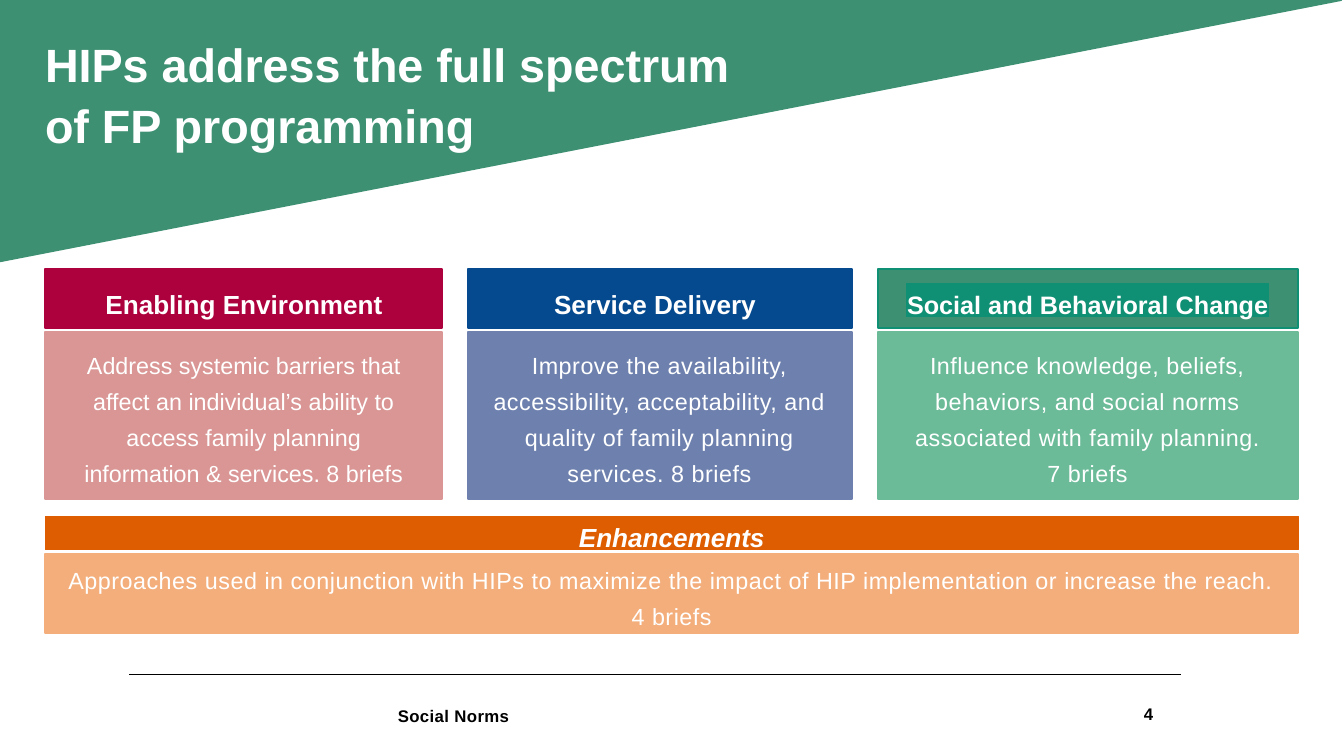
from lxml import etree
from pptx import Presentation
from pptx.dml.color import RGBColor
from pptx.enum.shapes import MSO_CONNECTOR, MSO_SHAPE
from pptx.enum.text import MSO_ANCHOR, PP_ALIGN
from pptx.oxml.ns import qn
from pptx.util import Inches, Pt

RECT, STRAIGHT = MSO_SHAPE.RECTANGLE, MSO_CONNECTOR.STRAIGHT
LEFT, CENTER, RIGHT = PP_ALIGN.LEFT, PP_ALIGN.CENTER, PP_ALIGN.RIGHT
TOP, MIDDLE = MSO_ANCHOR.TOP, MSO_ANCHOR.MIDDLE

TITLE_ONLY = 5
COLS, ROWS = 20, 11.25
W, H = Inches(20), Inches(11.25)
WHITE, BLACK, GREEN = "FFFFFF", "000000", "3E9073"

HEAD = {"size": Pt(28), "bold": True}
BODY = {"size": Pt(25)}
FOOT = {"size": Pt(18), "bold": True}

# box, header colour, header plate, header line, body colour,
# header text (inset, width, size), body text (inset, width, letter spacing)
CARDS = [
    ((0.67, 4.01, 5.91, 3.41), "AD013E", None, "AD013E", "D99694",
     (0.51, 4.9, 28), (0.48, 4.95, 0), "Enabling Environment",
     ["Address systemic barriers that affect an individual’s ability to "
      "access family planning information & services. 8 briefs"]),
    ((6.96, 4.01, 5.72, 3.41), "054A8E", None, "054A8E", "6E81AE",
     (0.55, 4.47, 28), (0.38, 4.95, 0.6), "Service Delivery",
     ["Improve the availability, accessibility, acceptability, and quality "
      "of family planning services. 8 briefs"]),
    ((13.06, 4.01, 6.26, 3.41), GREEN, "0F8F73", "0F8F73", "6BBB99",
     (0.43, 5.39, 27), (0.02, 6.21, 0.6), "Social and Behavioral Change",
     ["Influence knowledge, beliefs, behaviors, and social norms associated "
      "with family planning.", "7 briefs"]),
]


def color(hex_value):
    return RGBColor.from_string(hex_value)


def place(x, y, w, h):
    """Turn grid columns and rows into slide lengths."""
    return [int(v) for v in (x * W / COLS, y * H / ROWS, w * W / COLS, h * H / ROWS)]


def paint(sp, fill, line=None, width=2):
    sp.shadow.inherit = False
    sp.fill.solid()
    sp.fill.fore_color.rgb = color(fill)
    sp.line.color.rgb = color(line or fill)
    sp.line.width = Pt(width)


def panel(slide, box, fill, line=None, width=2):
    sp = slide.shapes.add_shape(RECT, *place(*box))
    paint(sp, fill, line, width)
    return sp


def write(sp, lines, fmt, align=CENTER, leading=38.5, ink=WHITE, spacing=0, anchor=TOP):
    tf = sp.text_frame
    frame = {"word_wrap": True, "vertical_anchor": anchor, "margin_left": 0,
             "margin_right": 0, "margin_top": 0, "margin_bottom": 0}
    for name, value in frame.items():
        setattr(tf, name, value)
    for i, line in enumerate(lines):
        p = tf.add_paragraph() if i else tf.paragraphs[0]
        p.alignment = align
        if leading:
            p.line_spacing = Pt(leading)
        r = p.add_run()
        r.text = line
        for name, value in {"name": "Arial", **fmt}.items():
            setattr(r.font, name, value)
        r.font.color.rgb = color(ink)
        if spacing:
            r._r.get_or_add_rPr().set("spc", str(round(spacing * 100)))


def label(slide, box, lines, fmt, **options):
    write(slide.shapes.add_textbox(*place(*box)), lines, fmt, **options)


def add_banner(slide, box):
    """Green wedge with the title on top of it."""
    x, y, w, h = place(*box)
    builder = slide.shapes.build_freeform(x, y)
    builder.add_line_segments([(x, y + h), (x + w, y)], close=True)
    paint(builder.convert_to_shape(), GREEN)

    title = slide.shapes.title
    title.left, title.top, title.width, title.height = place(0.67, 0.47, 10.58, 1.82)
    write(title, ["HIPs address the full spectrum of FP programming"],
          {"size": Pt(50), "bold": True}, align=LEFT, leading=65)
    slide.shapes._spTree.append(title._element)


def add_card(slide, box, head, plate, line, body, head_text, body_text, name, lines):
    """Header bar over a body panel, each with centred text."""
    x, y, w, h = box
    head_h, gap = 0.87, 0.06
    body_y = y + head_h + gap
    panel(slide, (x, y, w, head_h), head, line)
    panel(slide, (x, body_y, w, h - head_h - gap), body)

    inset, width, size = head_text
    head_box = (x + inset, y + 0.21, width, 0.49)
    if plate:
        panel(slide, head_box, plate, width=0.75)
    label(slide, head_box, [name], {**HEAD, "size": Pt(size)})

    inset, width, spacing = body_text
    label(slide, (x + inset, body_y + 0.17, width, 2.09), lines, BODY, spacing=spacing)


def add_enhancements(slide, box):
    """Full-width bar and panel under the cards."""
    x, y, w, h = box
    bar_h, gap = 0.49, 0.06
    body_y = y + bar_h + gap
    body_h = h - bar_h - gap
    panel(slide, (x, body_y, w, body_h), "F3AE7B")
    bar = panel(slide, (x, y, w, bar_h), "DD5D00", width=0.75)
    write(bar, ["Enhancements"], {**HEAD, "italic": True})
    label(slide, (x + 0.33, body_y + 0.17, w - 0.66, 0.86),
          ["Approaches used in conjunction with HIPs to maximize the impact of HIP "
           "implementation or increase the reach. 4 briefs"],
          BODY, spacing=0.6, anchor=MIDDLE)


def add_footer(slide, box):
    """Rule, section name and page number."""
    x, y, w, h = box
    left, top, width, _ = place(*box)
    rule = slide.shapes.add_connector(STRAIGHT, left, top, left + width, top)
    rule.line.color.rgb = color(BLACK)
    rule.line.width = Pt(0.75)
    etree.SubElement(rule._element.spPr, qn("a:effectLst"))
    label(slide, (x + 4, y + 0.41, 8, 0.33), ["Social Norms"], FOOT,
          align=LEFT, leading=25.2, ink=BLACK, spacing=0.4)
    label(slide, (x + w - 2.65, y + 0.38, 2.23, 0.4), ["4"], FOOT,
          align=RIGHT, leading=None, ink=BLACK, anchor=MIDDLE)


def main():
    prs = Presentation()
    prs.slide_width, prs.slide_height = W, H
    slide = prs.slides.add_slide(prs.slide_layouts[TITLE_ONLY])
    add_footer(slide, (1.92, 10.04, 15.66, 1))
    add_banner(slide, (-0.01, 0, 19.97, 3.89))
    for card in CARDS:
        add_card(slide, *card)
    add_enhancements(slide, (0.67, 7.69, 18.65, 1.73))
    prs.save("out.pptx")


if __name__ == "__main__":
    main()
